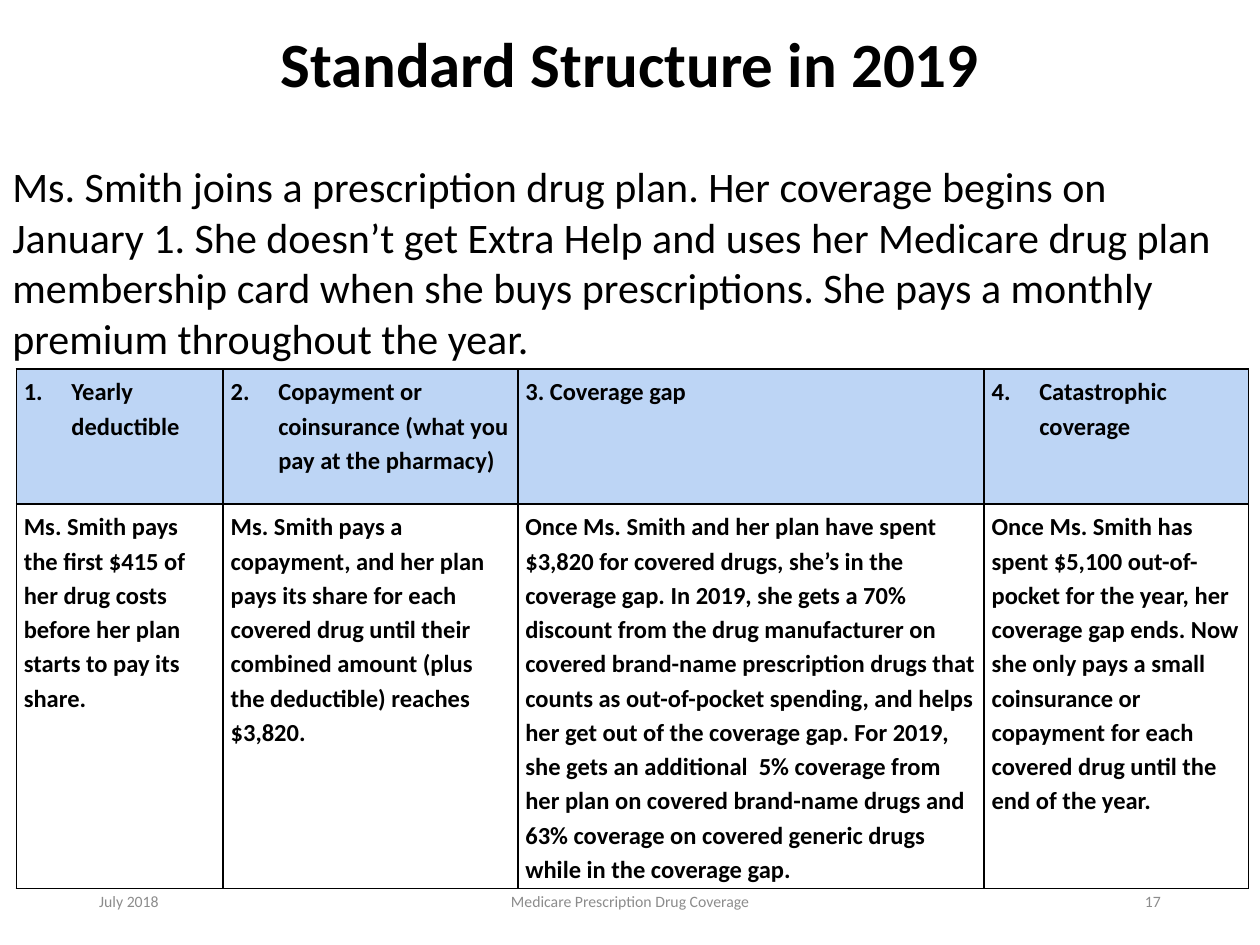
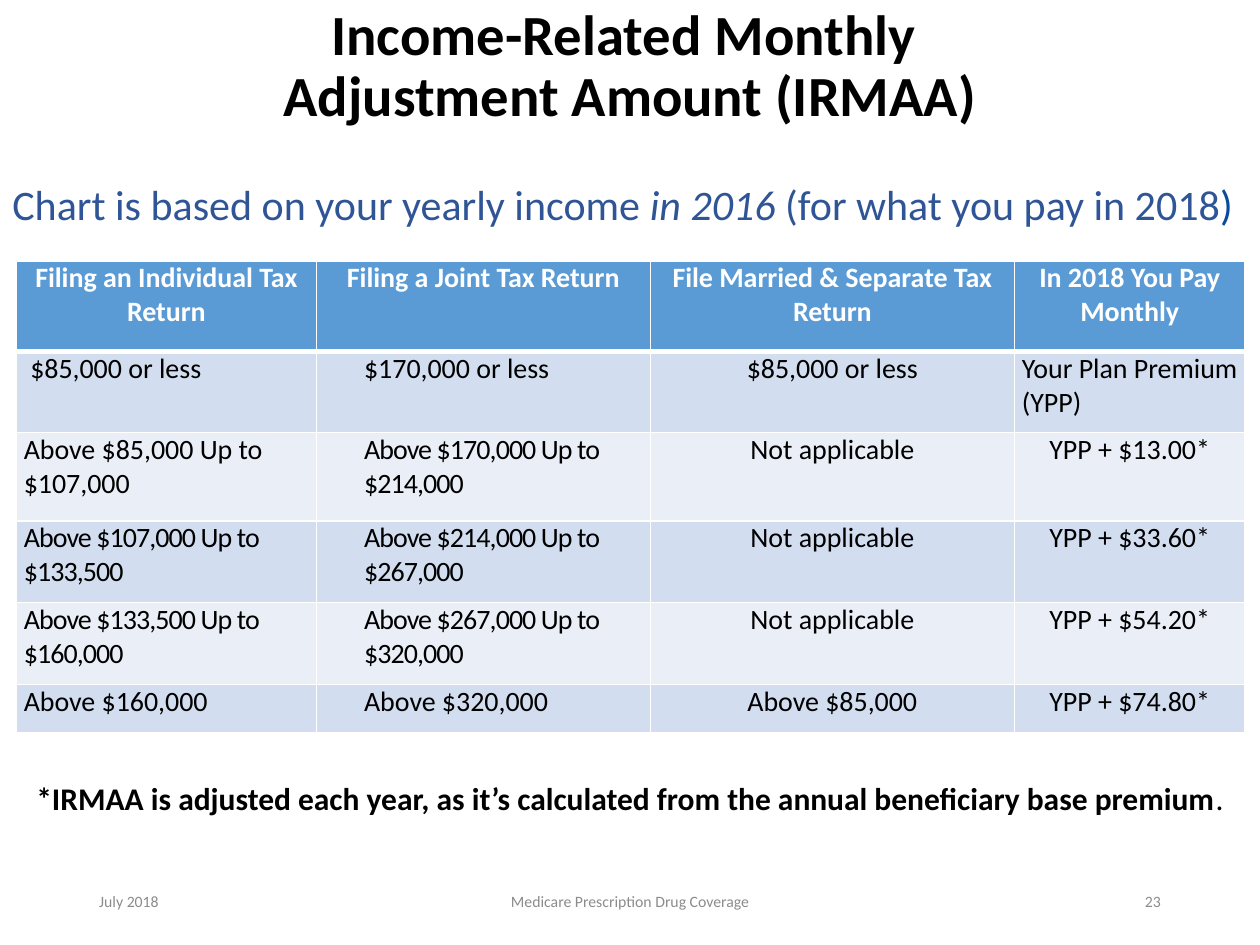
import pptx
import pptx.dml.color
import pptx.enum.text
import pptx.oxml.ns
import pptx.util
from lxml import etree

Cm, Pt = pptx.util.Cm, pptx.util.Pt
qn = pptx.oxml.ns.qn
ALIGN = pptx.enum.text.PP_ALIGN
ANCHOR = pptx.enum.text.MSO_ANCHOR
BLACK, WHITE, GREY = "000000", "FFFFFF", "8C8C8C"
NAVY, BLUE, SKY = "2F5597", "5B9BD5", "9BC0F1"
BANDS = "D2DEEF", "EAEFF7"
WIDTH = 25.4


def tint(text):
    return pptx.dml.color.RGBColor.from_string(text)


def sub(parent, tag, **attrs):
    return etree.SubElement(parent, qn(tag), {k: str(v) for k, v in attrs.items()})


class Deck:
    font = "Calibri"

    def __init__(self):
        self.prs = pptx.Presentation()
        self.prs.slide_width, self.prs.slide_height = Cm(WIDTH), Cm(19.05)
        self.slide = None

    def page(self, title, size, number):
        """Start a slide with its title and footers."""
        self.slide = self.prs.slides.add_slide(self.prs.slide_layouts[5])
        head = self.slide.shapes.title
        head.left, head.top, head.width, head.height = Cm(0), Cm(0.05), Cm(WIDTH), Cm(2.62)
        frame = head.text_frame
        frame.auto_size = pptx.enum.text.MSO_AUTO_SIZE.NONE
        frame.vertical_anchor = ANCHOR.MIDDLE
        para = frame.paragraphs[0]
        para.alignment, para.line_spacing = ALIGN.CENTER, 0.9
        for i, line in enumerate(title):
            if i:
                para.add_line_break()
            self.run(para, line, size, bold=True)
        foots = [(1.75, 5.72, "July 2018", ALIGN.LEFT),
                 (8.41, 8.58, "Medicare Prescription Drug Coverage", ALIGN.CENTER),
                 (17.93, 5.72, str(number), ALIGN.RIGHT)]
        for left, width, words, align in foots:
            self.text((left, 17.65, width, 1.02), [(words, {})], 9, GREY, align, ANCHOR.MIDDLE)

    def run(self, para, words, size, color=BLACK, bold=False, italic=False, space=0):
        run = para.add_run()
        run.text = words
        font = run.font
        font.name, font.size, font.bold, font.italic = self.font, Pt(size), bold, italic
        font.color.rgb = tint(color)
        if space:
            run._r.get_or_add_rPr().set("spc", str(round(space * 100)))

    def text(self, box, runs, size, color=BLACK, align=ALIGN.LEFT, anchor=ANCHOR.TOP):
        frame = self.slide.shapes.add_textbox(*map(Cm, box)).text_frame
        frame.word_wrap = True
        frame.vertical_anchor = anchor
        para = frame.paragraphs[0]
        para.alignment = align
        for words, style in runs:
            self.run(para, words, size, **{"color": color, **style})

    def table(self, top, cols, rows):
        shape = self.slide.shapes.add_table(len(rows), len(cols), Cm(0.33), Cm(top),
                                            Cm(sum(cols)), Cm(sum(rows)))
        table = shape.table
        table.first_row = table.horz_banding = False
        for col, width in zip(table.columns, cols):
            col.width = Cm(width)
        for row, height in zip(table.rows, rows):
            row.height = Cm(height)
        return table

    def cell(self, cell, words, size, fill, line, pad=0, alpha=100, top=1, bottom=1,
             align=ALIGN.LEFT, indent=0, number=0, spread=None, **style):
        """Fill one table cell; number gives the paragraph a list number."""
        cell.margin_left = cell.margin_right = Cm(0.15)
        cell.margin_top = cell.margin_bottom = Cm(pad)
        cell.fill.solid()
        cell.fill.fore_color.rgb = tint(fill)
        props = cell._tc.get_or_add_tcPr()
        if alpha < 100:
            sub(props.find(".//" + qn("a:srgbClr")), "a:alpha", val=alpha * 1000)
        sides = ("L", 1), ("R", 1), ("T", top), ("B", bottom)
        for i, (side, width) in enumerate(sides):
            edge = sub(props, "a:ln" + side, w=Pt(width))
            sub(sub(edge, "a:solidFill"), "a:srgbClr", val=line)
            props.insert(i, edge)
        para = cell.text_frame.paragraphs[0]
        ppr = para._p.get_or_add_pPr()
        if indent:
            ppr.set("marL", str(Cm(indent)))
        if number:
            ppr.set("indent", str(-Cm(indent)))
            sub(ppr, "a:buAutoNum", type="arabicPeriod", startAt=number)
        para.alignment = align
        if spread:
            para.line_spacing = spread
        self.run(para, words, size, **style)


def phases(deck):
    deck.page(["Standard Structure in 2019"], 36, 17)
    deck.text((0, 3.12, 25.17, 4.3), [(
        "Ms. Smith joins a prescription drug plan. Her coverage begins on January 1. "
        "She doesn’t get Extra Help and uses her Medicare drug plan membership card when "
        "she buys prescriptions. She pays a monthly premium throughout the year.", {})], 24)
    steps = [
        ("Yearly deductible",
         "Ms. Smith pays the first $415 of her drug costs before her plan starts to pay "
         "its share."),
        ("Copayment or coinsurance (what you pay at the pharmacy)",
         "Ms. Smith pays a copayment, and her plan pays its share for each covered drug "
         "until their combined amount (plus the deductible) reaches $3,820."),
        ("3. Coverage gap",
         "Once Ms. Smith and her plan have spent $3,820 for covered drugs, she’s in the "
         "coverage gap. In 2019, she gets a 70% discount from the drug manufacturer on "
         "covered brand-name prescription drugs that counts as out-of-pocket spending, and "
         "helps her get out of the coverage gap. For 2019, she gets an additional  5% "
         "coverage from her plan on covered brand-name drugs and 63% coverage on covered "
         "generic drugs while in the coverage gap."),
        ("Catastrophic coverage",
         "Once Ms. Smith has spent $5,100 out-of-pocket for the year, her coverage gap "
         "ends. Now she only pays a small coinsurance or copayment for each covered drug "
         "until the end of the year."),
    ]
    table = deck.table(7.44, [4.17, 5.94, 9.4, 5.33], [2.72, 7.75])
    look = dict(size=14, line=BLACK, pad=0.08, spread=1.15, bold=True)
    for i, (name, story) in enumerate(steps):
        typed = name[0].isdigit()
        deck.cell(table.cell(0, i), name, fill=SKY, alpha=65, indent=0 if typed else 0.96,
                  number=0 if typed else i + 1, **look)
        deck.cell(table.cell(1, i), story, fill=WHITE, **look)


def income(deck):
    deck.page(["Income-Related Monthly ", "Adjustment Amount (IRMAA)"], 32.4, 23)
    deck.text((0, 15.57, WIDTH, 1.02), [
        ("*IRMAA is adjusted each year, as it’s calculated from the annual beneficiary "
         "base premium", {"bold": True}), (".", {})], 18, align=ALIGN.CENTER)
    deck.text((0, 3.48, WIDTH, 1.27), [
        ("Chart is based on your yearly income ", {}), ("in 2016 ", {"italic": True}),
        ("(for what you pay in 2018", {}), (")", {"color": "084A9C"})], 24, NAVY)
    heads = ["Filing an Individual Tax Return", "Filing a Joint Tax Return",
             "File Married & Separate Tax Return", "In 2018 You Pay Monthly"]
    none = "Not applicable"
    rows = [
        ("$85,000 or less", "$170,000 or less", "$85,000 or less", "Your Plan Premium (YPP)"),
        ("Above $85,000 Up to $107,000", "Above $170,000 Up to $214,000", none, "YPP + $13.00*"),
        ("Above $107,000 Up to $133,500", "Above $214,000 Up to $267,000", none, "YPP + $33.60*"),
        ("Above $133,500 Up to $160,000", "Above $267,000 Up to $320,000", none, "YPP + $54.20*"),
        ("Above $160,000", "Above $320,000", "Above $85,000", "YPP + $74.80*"),
    ]
    table = deck.table(5.26, [6.05, 6.73, 7.34, 4.65], [1.83, 1.63, 1.78, 1.65, 1.65, 0.97])
    for c, name in enumerate(heads):
        deck.cell(table.cell(0, c), name, 16, BLUE, WHITE, bottom=3, align=ALIGN.CENTER,
                  color=WHITE, bold=True)
    for r, row in enumerate(rows):
        for c, words in enumerate(row):
            mid = c == 2 or (c == 3 and r > 0)
            indent = 0.81 if c == 1 else 0.13 if r == c == 0 else 0
            deck.cell(table.cell(r + 1, c), words, 16, BANDS[r % 2], WHITE,
                      top=1 if r else 3, align=ALIGN.CENTER if mid else ALIGN.LEFT,
                      indent=indent, space=-0.5 if len(words) > 28 else 0)


def main():
    deck = Deck()
    phases(deck)
    income(deck)
    deck.prs.save("out.pptx")


if __name__ == "__main__":
    main()
